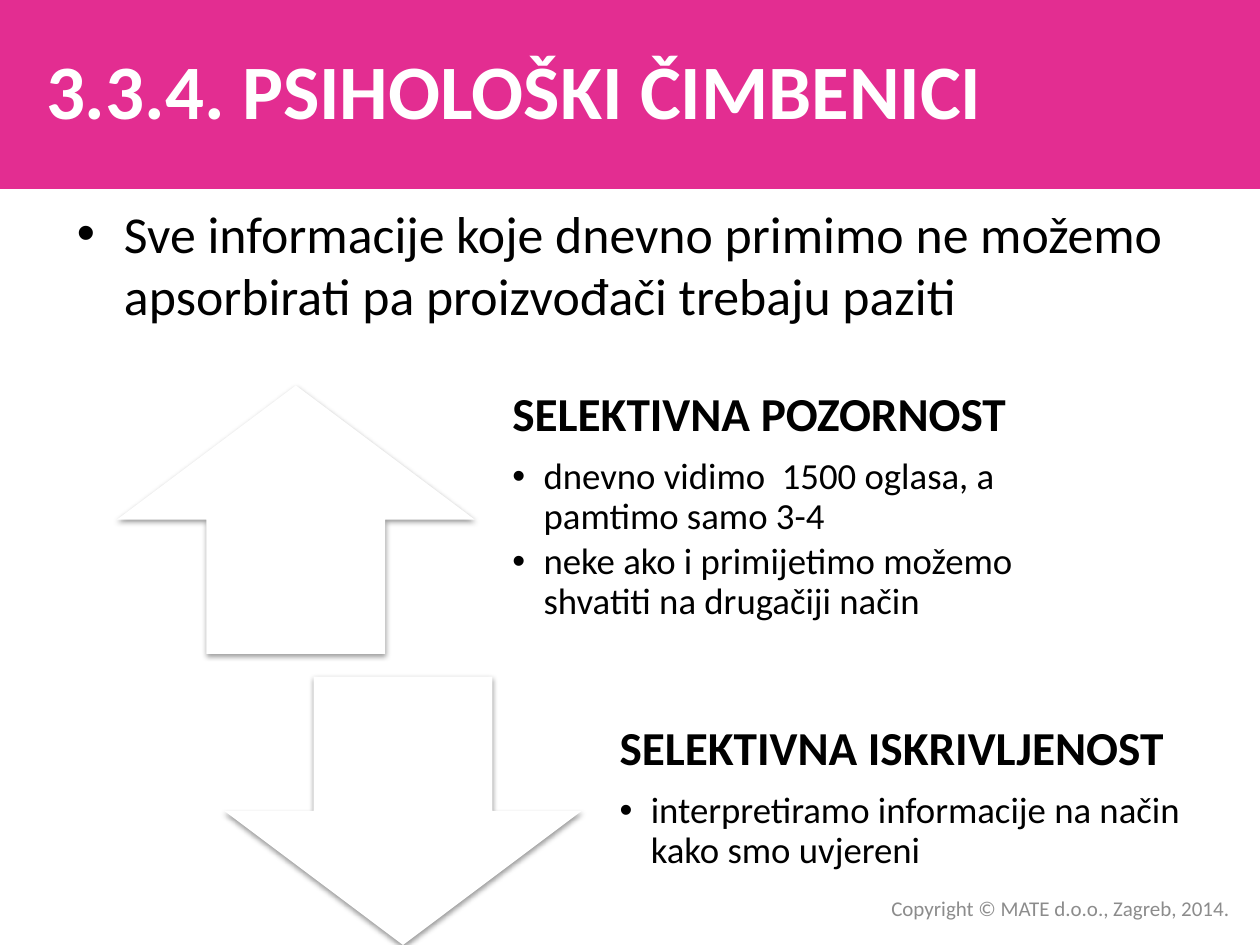
from dataclasses import dataclass

from lxml.etree import SubElement
from pptx import Presentation
from pptx.dml.color import RGBColor
from pptx.enum.shapes import MSO_SHAPE as Shape
from pptx.enum.text import MSO_ANCHOR as Anchor, PP_ALIGN as Align
from pptx.oxml.ns import qn
from pptx.util import Cm, Pt


@dataclass(frozen=True)
class Theme:
    font: str = "Calibri"
    pink: str = "E32D91"
    white: str = "FFFFFF"
    black: str = "000000"
    grey: str = "8C8C8C"
    title: float = 44
    lead: float = 29.6
    heading: float = 27
    detail: float = 21
    footer: float = 12


@dataclass(frozen=True)
class Box:
    left: float
    top: float
    width: float
    height: float

    def lengths(self) -> tuple:
        return Cm(self.left), Cm(self.top), Cm(self.width), Cm(self.height)


@dataclass(frozen=True)
class Factor:
    arrow: Shape
    heading: str
    details: tuple[str, ...]


THEME = Theme()
ARROW = Box(2.36, 7.77, 7.21, 5.41)
STEP_X, STEP_Y = 2.73 - 0.57, 5.87
TEXT_OFFSET, TEXT_WIDTH = 7.44, 13.11
TEXT_INSET = 0.53

FACTORS = (
    Factor(Shape.UP_ARROW, "SELEKTIVNA POZORNOST", (
        "dnevno vidimo  1500 oglasa, a pamtimo samo 3-4",
        "neke ako i primijetimo možemo shvatiti na drugačiji način",
    )),
    Factor(Shape.DOWN_ARROW, "SELEKTIVNA ISKRIVLJENOST", (
        "interpretiramo informacije na način kako smo uvjereni",
    )),
)


def add_panel(slide, kind: Shape, box: Box, color: str):
    panel = slide.shapes.add_shape(kind, *box.lengths())
    panel.shadow.inherit = False
    panel.fill.solid()
    panel.fill.fore_color.rgb = RGBColor.from_string(color)
    panel.line.fill.background()
    return panel


def add_shadow(panel) -> None:
    effects = panel._element.spPr.find(qn("a:effectLst"))
    shadow = SubElement(effects, qn("a:outerShdw"), blurRad=str(Pt(3.1)),
                        dist=str(Pt(1.6)), dir="5400000", rotWithShape="0")
    color = SubElement(shadow, qn("a:srgbClr"), val=THEME.black)
    SubElement(color, qn("a:alpha"), val="38000")


def add_frame(slide, box: Box, anchor: Anchor = Anchor.MIDDLE):
    frame = slide.shapes.add_textbox(*box.lengths()).text_frame
    frame.word_wrap = True
    frame.vertical_anchor = anchor
    return frame


def write(paragraph, text: str, size: float, color: str = THEME.black,
          bold: bool = False, align: Align = Align.LEFT) -> None:
    paragraph.alignment = align
    run = paragraph.add_run()
    run.text = text
    run.font.name = THEME.font
    run.font.size = Pt(size)
    run.font.bold = bold
    run.font.color.rgb = RGBColor.from_string(color)


def add_bullet(paragraph, indent: float) -> None:
    properties = paragraph._p.get_or_add_pPr()
    properties.set("marL", str(Cm(indent)))
    properties.set("indent", str(-Cm(indent)))
    SubElement(properties, qn("a:buFont"), typeface="Arial")
    SubElement(properties, qn("a:buChar"), char="•")


def set_spacing(paragraph, after: float) -> None:
    paragraph.line_spacing = 0.9
    paragraph.space_after = Pt(after)


def add_factor(slide, factor: Factor, index: int) -> None:
    left = ARROW.left + index * STEP_X
    top = ARROW.top + index * STEP_Y
    add_shadow(add_panel(slide, factor.arrow,
                         Box(left, top, ARROW.width, ARROW.height), THEME.white))

    frame = add_frame(slide, Box(left + TEXT_OFFSET, top, TEXT_WIDTH, ARROW.height))
    frame.margin_left = frame.margin_right = frame.margin_bottom = Cm(TEXT_INSET)
    frame.margin_top = 0
    heading = frame.paragraphs[0]
    set_spacing(heading, THEME.heading * 0.35)
    write(heading, factor.heading, THEME.heading, bold=True)
    for detail in factor.details:
        item = frame.add_paragraph()
        item.level = 1
        add_bullet(item, 0.63)
        set_spacing(item, THEME.detail * 0.15)
        write(item, detail, THEME.detail)


def main() -> None:
    deck = Presentation()
    deck.slide_width, deck.slide_height = Cm(25.4), Cm(19.05)
    slide = deck.slides.add_slide(deck.slide_layouts[6])

    add_panel(slide, Shape.RECTANGLE, Box(0, 0, 25.4, 3.81), THEME.pink)

    lead = add_frame(slide, Box(1.3, 3.94, 23.6, 3.89), Anchor.TOP).paragraphs[0]
    add_bullet(lead, 0.95)
    write(lead, "Sve informacije koje dnevno primimo ne možemo apsorbirati "
                "pa proizvođači trebaju paziti", THEME.lead)

    for index, factor in enumerate(FACTORS):
        add_factor(slide, factor, index)

    title = add_frame(slide, Box(0, 0.2, 20.75, 3.18)).paragraphs[0]
    write(title, "3.3.4. PSIHOLOŠKI ČIMBENICI", THEME.title, THEME.white,
          bold=True, align=Align.CENTER)

    footer = add_frame(slide, Box(11.91, 17.93, 13.13, 0.76)).paragraphs[0]
    write(footer, "Copyright © MATE d.o.o., Zagreb, 2014.", THEME.footer,
          THEME.grey, align=Align.RIGHT)

    deck.save("out.pptx")


if __name__ == "__main__":
    main()
